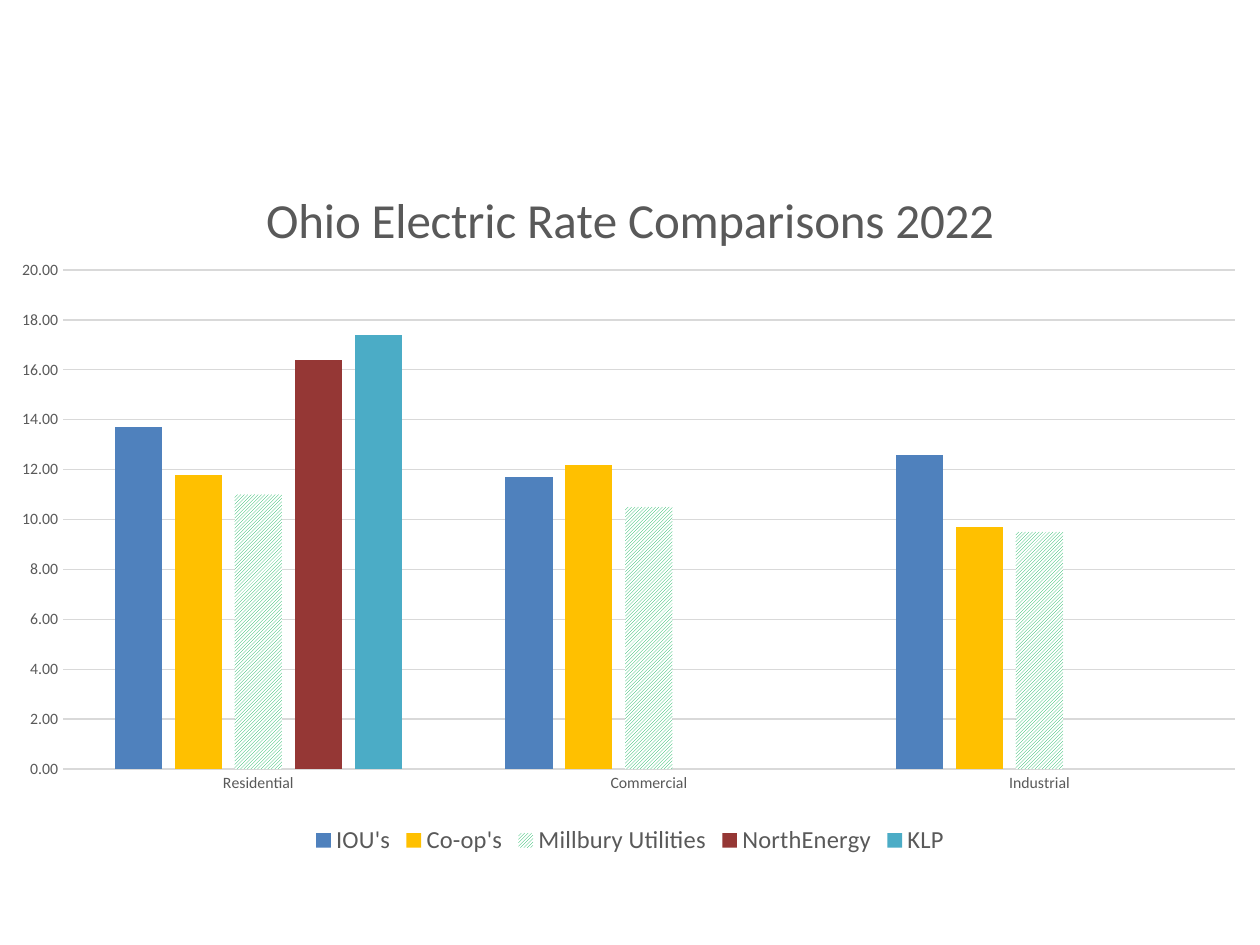
from dataclasses import dataclass

from lxml import etree
from pptx import Presentation
from pptx.chart.data import CategoryChartData
from pptx.dml.color import RGBColor
from pptx.enum.chart import XL_CHART_TYPE, XL_LEGEND_POSITION, XL_TICK_MARK
from pptx.enum.dml import MSO_PATTERN
from pptx.util import Inches, Pt

COLUMNS = XL_CHART_TYPE.COLUMN_CLUSTERED
BOTTOM = XL_LEGEND_POSITION.BOTTOM
NO_TICK = XL_TICK_MARK.NONE
STRIPES = MSO_PATTERN.DARK_UPWARD_DIAGONAL
CHART_NS = "http://schemas.openxmlformats.org/drawingml/2006/chart"


@dataclass(frozen=True)
class Theme:
    font: str = "Calibri"
    text: str = "595959"
    rule: str = "D9D9D9"
    paper: str = "FFFFFF"
    title_size: int = 28
    legend_size: int = 14
    axis_size: int = 9
    rule_width: float = 0.75


THEME = Theme()

# Content: name, rates by customer class, colour, striped
TITLE = "Ohio Electric Rate Comparisons 2022"
CLASSES = ["Residential", "Commercial", "Industrial"]
SUPPLIERS = [
    ("IOU's", (13.7, 11.7, 12.6), "4F81BD", False),
    ("Co-op's", (11.8, 12.2, 9.7), "FFC000", False),
    ("Millbury Utilities", (11, 10.5, 9.5), "00B050", True),
    ("NorthEnergy", (16.4, None, None), "953735", False),
    ("KLP", (17.4, None, None), "4BACC6", False),
]

# Inner plot area, as shares of the chart
PLOT = {"x": 0.05, "y": 0.16, "w": 0.93, "h": 0.71}


def rgb(code):
    return RGBColor.from_string(code)


def style_font(font, size):
    font.name = THEME.font
    font.size = Pt(size)
    font.bold = False
    font.color.rgb = rgb(THEME.text)


def style_rule(line):
    line.color.rgb = rgb(THEME.rule)
    line.width = Pt(THEME.rule_width)


def place_plot(chart):
    """Fix the inner plot area, which has no public setting."""
    def tag(name):
        return f"{{{CHART_NS}}}{name}"

    area = chart.element.find(f".//{tag('plotArea')}")
    for old in area.findall(tag("layout")):
        area.remove(old)
    layout = etree.Element(tag("layout"))
    area.insert(0, layout)
    manual = etree.SubElement(layout, tag("manualLayout"))
    settings = {"layoutTarget": "inner", "xMode": "edge", "yMode": "edge", **PLOT}
    for name, value in settings.items():
        etree.SubElement(manual, tag(name), val=str(value))


def add_rate_chart(slide, width, height):
    data = CategoryChartData(number_format="0.00")
    data.categories = CLASSES
    for name, rates, _, _ in SUPPLIERS:
        data.add_series(name, rates)
    chart = slide.shapes.add_chart(
        COLUMNS, 0, height // 6, width, Inches(5.58), data).chart
    style_font(chart.font, THEME.axis_size)

    # Title and legend
    chart.has_title = True
    chart.chart_title.include_in_layout = False
    p = chart.chart_title.text_frame.paragraphs[0]
    p.text = TITLE
    style_font(p.font, THEME.title_size)
    chart.has_legend = True
    chart.legend.position = BOTTOM
    chart.legend.include_in_layout = False
    style_font(chart.legend.font, THEME.legend_size)

    # Axes
    for axis in (chart.category_axis, chart.value_axis):
        axis.major_tick_mark = axis.minor_tick_mark = NO_TICK
        style_font(axis.tick_labels.font, THEME.axis_size)
    style_rule(chart.category_axis.format.line)
    rates_axis = chart.value_axis
    rates_axis.minimum_scale, rates_axis.maximum_scale = 0, 20
    rates_axis.major_unit = 2
    rates_axis.format.line.fill.background()
    rates_axis.tick_labels.number_format = "0.00"
    rates_axis.tick_labels.number_format_is_linked = False
    style_rule(rates_axis.major_gridlines.format.line)

    # Columns
    plot = chart.plots[0]
    plot.gap_width, plot.overlap = 219, -27
    plot.vary_by_categories = False
    for series, (_, _, color, striped) in zip(plot.series, SUPPLIERS):
        fill = series.format.fill
        series.invert_if_negative = False
        if striped:
            fill.patterned()
            fill.pattern = STRIPES
            fill.back_color.rgb = rgb(THEME.paper)
        else:
            fill.solid()
        fill.fore_color.rgb = rgb(color)
    place_plot(chart)


def main():
    prs = Presentation()
    prs.slide_width, prs.slide_height = Inches(10), Inches(7.5)
    slide = prs.slides.add_slide(prs.slide_layouts[6])
    add_rate_chart(slide, prs.slide_width, prs.slide_height)
    prs.save("out.pptx")


if __name__ == "__main__":
    main()
